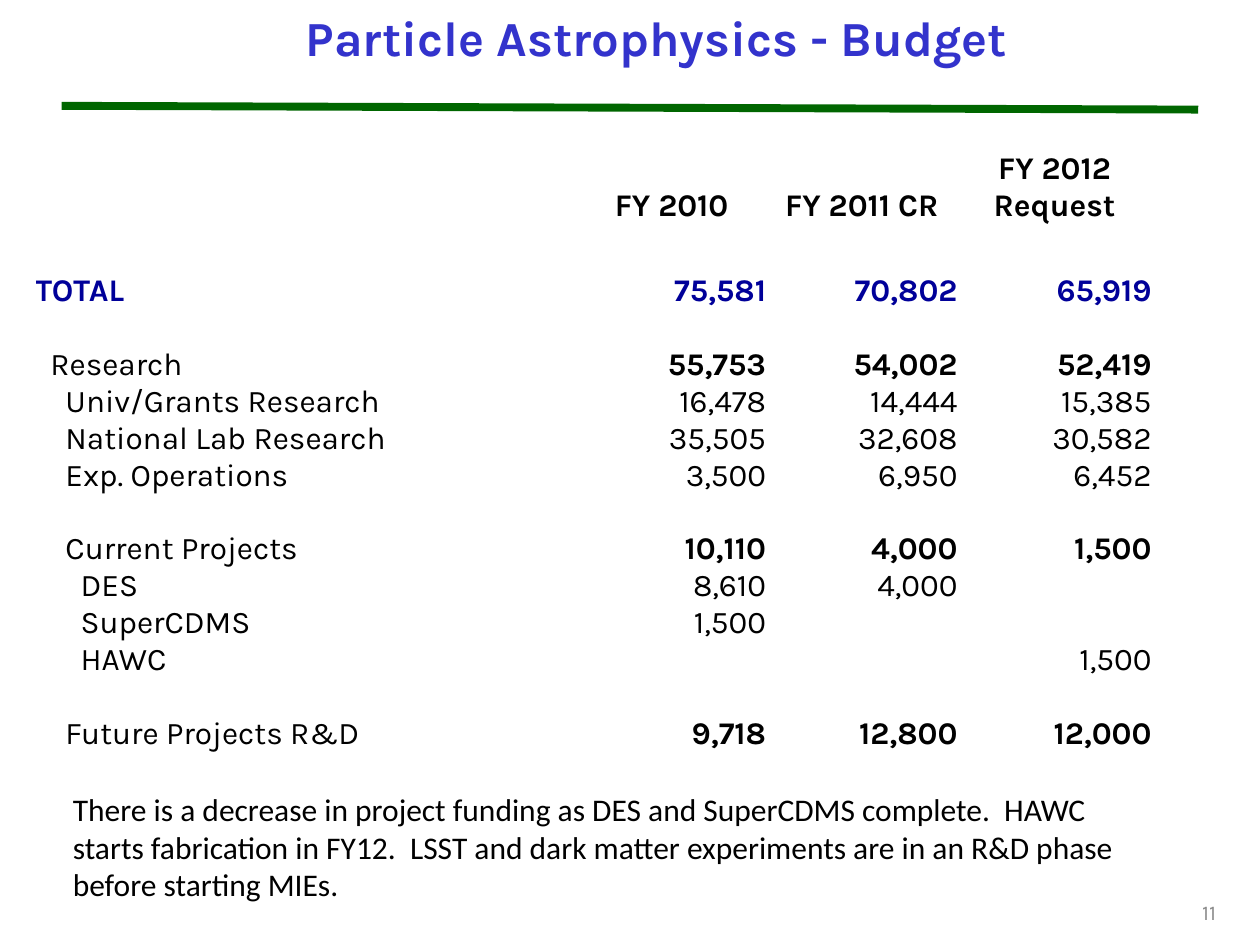
from pptx import Presentation
from pptx import util as u
from pptx.dml.color import RGBColor
from pptx.enum import shapes, text
from pptx.oxml.ns import qn
from lxml import etree

BLACK, NAVY = "000000", "000099"
COL_WIDTHS = [4.3, 1.5, 1.52, 1.54]
HEADER_H, TOTAL_H, ROW_H = 0.59, 0.34, 0.29
INDENT = 0.12
HEADERS = ["", "FY 2010", "FY 2011 CR", "FY 2012 Request"]
BLANK = ("", 0, ["", "", ""], False)
# label, indent level, yearly values, bold values
ROWS = [
    BLANK,
    ("TOTAL", 0, ["75,581", "70,802", "65,919"], True),
    BLANK,
    ("Research", 1, ["55,753", "54,002", "52,419"], True),
    ("Univ/Grants Research", 2, ["16,478", "14,444", "15,385"], False),
    ("National Lab Research", 2, ["35,505", "32,608", "30,582"], False),
    ("Exp. Operations", 2, ["3,500", "6,950", "6,452"], False),
    BLANK,
    ("Current Projects", 2, ["10,110", "4,000", "1,500"], True),
    ("DES", 3, ["8,610", "4,000", ""], False),
    ("SuperCDMS", 3, ["1,500", "", ""], False),
    ("HAWC", 3, ["", "", "1,500"], False),
    BLANK,
    ("Future Projects R&D", 2, ["9,718", "12,800", "12,000"], True),
]
ALIGN = text.PP_ALIGN
ANCHOR = text.MSO_ANCHOR


def rgb(value):
    return RGBColor.from_string(value)


def write(tf, words, align=ALIGN.LEFT, color=BLACK, **font):
    p = tf.paragraphs[0]
    p.alignment = align
    r = p.add_run()
    r.text = words
    r.font.color.rgb = rgb(color)
    values = {"name": "Karla", "size": u.Pt(18), "bold": False, **font}
    for key, value in values.items():
        setattr(r.font, key, value)


def add_title(s, words):
    sp = s.shapes.title
    sp.left, sp.top, sp.width, sp.height = map(u.Inches, (1.24, 0, 7.94, 0.58))
    sp.fill.solid()
    sp.fill.fore_color.rgb = rgb("FFFFFF")
    tf = sp.text_frame
    tf.auto_size = text.MSO_AUTO_SIZE.NONE
    tf.vertical_anchor = ANCHOR.MIDDLE
    write(tf, words, ALIGN.CENTER, "3333CC", size=u.Pt(28), bold=True)


def add_rule(s, *ends):
    line = s.shapes.add_connector(shapes.MSO_CONNECTOR.STRAIGHT, *map(u.Inches, ends))
    line.line.color.rgb = rgb("006600")
    line.line.width = u.Pt(4.5)
    etree.SubElement(line._element.spPr, qn("a:effectLst"))


def add_text(s, box, words, anchor=ANCHOR.TOP, **fmt):
    tf = s.shapes.add_textbox(*map(u.Inches, box)).text_frame
    tf.word_wrap = True
    tf.vertical_anchor = anchor
    write(tf, words, **fmt)


def fill_cell(cell, words, indent=0, **fmt):
    cell.fill.background()
    cell.vertical_anchor = ANCHOR.BOTTOM
    cell.margin_left = u.Inches(indent)
    cell.margin_right = cell.margin_top = cell.margin_bottom = 0
    if words:
        write(cell.text_frame, words, **fmt)
    else:
        # Small end mark keeps an empty cell from stretching its row
        end = cell.text_frame.paragraphs[0]._p.get_or_add_endParaRPr()
        end.set("sz", "1000")


def add_budget(s):
    heights = [HEADER_H] + [TOTAL_H] * 2 + [ROW_H] * (len(ROWS) - 2)
    frame = s.shapes.add_table(
        len(heights), len(COL_WIDTHS), u.Inches(0.28), u.Inches(1.19),
        u.Inches(sum(COL_WIDTHS)), u.Inches(sum(heights)))
    table = frame.table
    table.first_row = table.horz_banding = False
    for column, width in zip(table.columns, COL_WIDTHS):
        column.width = u.Inches(width)
    for row, height in zip(table.rows, heights):
        row.height = u.Inches(height)

    for c, words in enumerate(HEADERS):
        fill_cell(table.cell(0, c), words, align=ALIGN.CENTER, bold=True)
    for i, (label, level, values, bold) in enumerate(ROWS, 1):
        total = label == "TOTAL"
        color = NAVY if total else BLACK
        fill_cell(table.cell(i, 0), label, level * INDENT, color=color, bold=total)
        for c, value in enumerate(values, 1):
            fill_cell(table.cell(i, c), value, align=ALIGN.RIGHT, color=color, bold=bold)


def main():
    prs = Presentation()
    prs.slide_width, prs.slide_height = u.Inches(10), u.Inches(7.5)
    s = prs.slides.add_slide(prs.slide_layouts[5])

    # Heading
    add_rule(s, 0.49, 0.84, 9.51, 0.87)
    add_title(s, "Particle Astrophysics - Budget")

    # Budget figures
    add_budget(s)

    # Page number and comment
    add_text(s, (7.41, 6.98, 2.34, 0.52), "11", ANCHOR.MIDDLE,
             align=ALIGN.RIGHT, color="8C8C8C", size=u.Pt(12))
    add_text(s, (0.48, 6.22, 8.8, 1),
             "There is a decrease in project funding as DES and SuperCDMS complete.  "
             "HAWC starts fabrication in FY12.  LSST and dark matter experiments are "
             "in an R&D phase before starting MIEs.", name="Calibri")
    prs.save("out.pptx")


if __name__ == "__main__":
    main()
